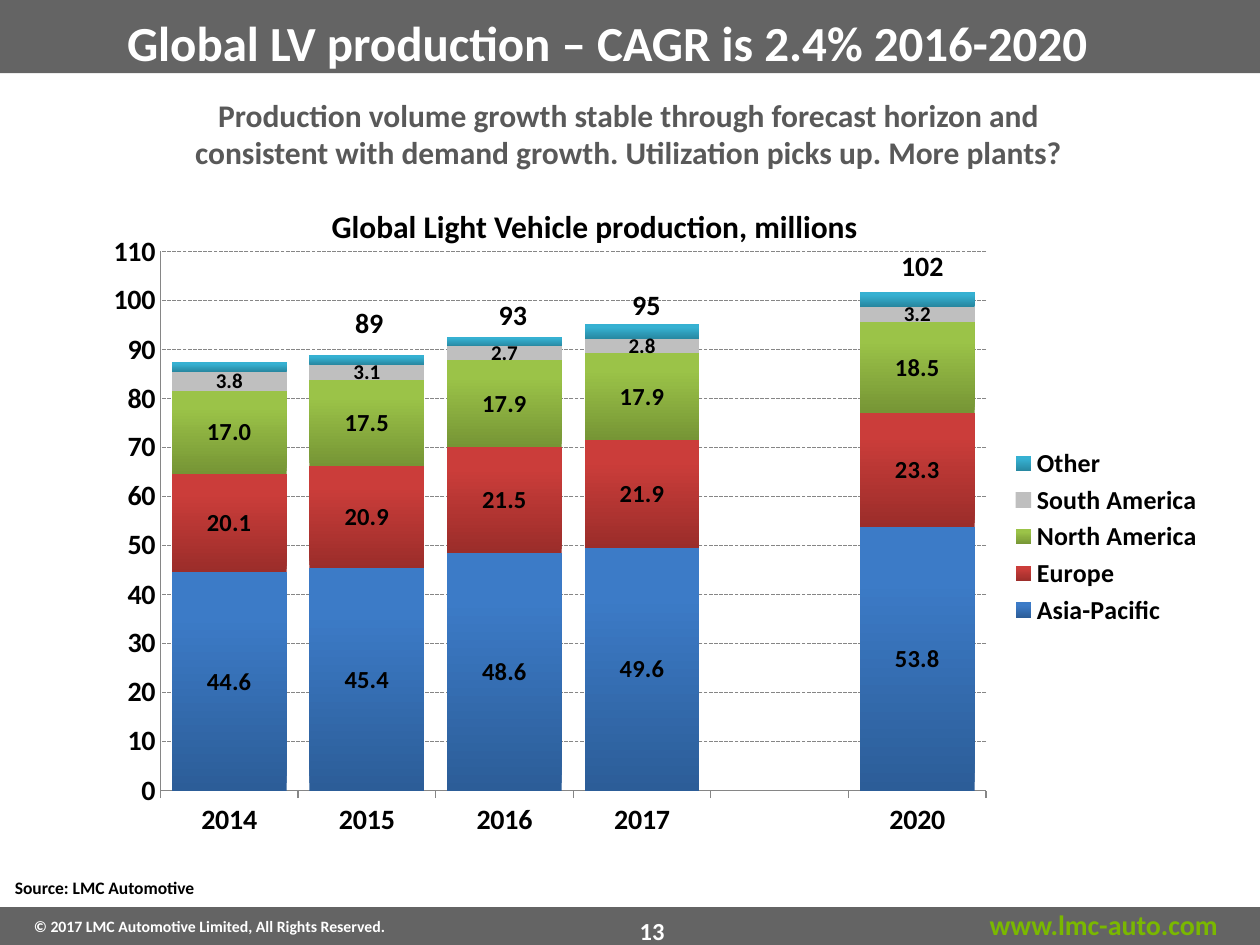
"""Build the slide on global light vehicle production."""
from lxml.etree import SubElement
from pptx import Presentation
from pptx.chart.data import CategoryChartData
from pptx.dml.color import RGBColor
from pptx.enum.chart import XL_CHART_TYPE, XL_LABEL_POSITION, XL_LEGEND_POSITION, XL_TICK_MARK
from pptx.enum.dml import MSO_LINE
from pptx.enum.shapes import MSO_SHAPE
from pptx.enum.text import PP_ALIGN
from pptx.oxml.ns import qn
from pptx.util import Inches, Pt


def style(font, size, color="000000"):
    font.name = "Calibri"
    font.size = Pt(size)
    font.bold = True
    font.color.rgb = RGBColor.from_string(color)


def text(at, lines, size, color="000000", align=PP_ALIGN.CENTER):
    tf = s.shapes.add_textbox(*map(Inches, at)).text_frame
    tf.word_wrap = True
    for i, line in enumerate(lines):
        p = tf.paragraphs[0] if i == 0 else tf.add_paragraph()
        p.alignment = align
        r = p.add_run()
        r.text = line
        style(r.font, size, color)


prs = Presentation()
prs.slide_width, prs.slide_height = Inches(10), Inches(7.5)
s = prs.slides.add_slide(prs.slide_layouts[6])

for top, height in [(0, 0.58), (7.2, 0.3)]:
    sp = s.shapes.add_shape(MSO_SHAPE.RECTANGLE, 0, Inches(top), Inches(10), Inches(height))
    sp.shadow.inherit = False
    sp.fill.solid()
    sp.fill.fore_color.rgb = RGBColor.from_string("646464")
    sp.line.fill.background()

text((7.62, 7.15, 2.28, 0.37), ["www.lmc-auto.com"], 16, "7AB800")
text((0.17, 7.23, 3.59, 0.25), ["© 2017 LMC Automotive Limited, All Rights Reserved."], 9, "FFFFFF", PP_ALIGN.LEFT)
text((3.38, 7.22, 3.59, 0.33), ["13"], 14, "FFFFFF")

series = [
    ("Asia-Pacific", (44.6, 45.4, 48.6, 49.6, None, 53.8), ("2C5D98", "3C7BC7"), 14),
    ("Europe", (20.1, 20.9, 21.5, 21.9, None, 23.3), ("9B2D2A", "CB3D3A"), 14),
    ("North America", (17, 17.5, 17.9, 17.9, None, 18.5), ("769535", "9BC348"), 14),
    ("South America", (3.8, 3.1, 2.7, 2.8, None, 3.2), ("BFBFBF",), 12),
    ("Other", (2, 2, 2, 3, None, 3), ("2787A0", "36B1D2"), None),
]
data = CategoryChartData()
data.categories = ["2014", "2015", "2016", "2017", " ", "2020"]
for name, values, colors, size in series:
    data.add_series(name, values)
chart = s.shapes.add_chart(XL_CHART_TYPE.COLUMN_STACKED, Inches(0.71), Inches(1.77),
                           Inches(8.94), Inches(4.98), data).chart
chart.has_title = False
style(chart.font, 18)
chart.has_legend = True
chart.legend.position = XL_LEGEND_POSITION.RIGHT
chart.legend.include_in_layout = False
style(chart.legend.font, 14.8)

plot = chart.plots[0]
plot.gap_width, plot.overlap, plot.vary_by_categories = 20, 100, False
for ser, (name, values, colors, size) in zip(plot.series, series):
    fill = ser.format.fill
    if len(colors) == 1:
        fill.solid()
        fill.fore_color.rgb = RGBColor.from_string(colors[0])
    else:
        fill.gradient()
        fill.gradient_angle = 90
        for stop, color, position in zip(fill.gradient_stops, colors, (0, 0.8)):
            stop.color.rgb = RGBColor.from_string(color)
            stop.position = position
    if size:
        labels = ser.data_labels
        labels.show_value = True
        labels.number_format, labels.number_format_is_linked = "0.0", False
        labels.position = XL_LABEL_POSITION.CENTER
        style(labels.font, size)

for axis in (chart.category_axis, chart.value_axis):
    style(axis.tick_labels.font, 16)
    axis.format.line.color.rgb = RGBColor.from_string("868686")
    axis.format.line.width = Pt(0.75)
chart.category_axis.major_tick_mark = XL_TICK_MARK.OUTSIDE
axis = chart.value_axis
axis.major_tick_mark = XL_TICK_MARK.NONE
axis.minimum_scale, axis.maximum_scale, axis.major_unit = 0, 110, 10
axis.tick_labels.number_format, axis.tick_labels.number_format_is_linked = "0", False
grid = axis.major_gridlines.format.line
grid.color.rgb = RGBColor.from_string("868686")
grid.width = Pt(0.75)
grid.dash_style = MSO_LINE.SQUARE_DOT

area = chart.element.chart.plotArea
for old in area.findall(qn("c:layout")):
    area.remove(old)
layout = SubElement(area, qn("c:layout"))
area.insert(0, layout)
manual = SubElement(layout, qn("c:manualLayout"))
for tag, val in [("layoutTarget", "inner"), ("xMode", "edge"), ("yMode", "edge"),
                 ("x", "0.063"), ("y", "0.046"), ("w", "0.733"), ("h", "0.859")]:
    SubElement(manual, qn("c:" + tag)).set("val", val)

text((1.48, 1.59, 6.48, 0.4), ["Global Light Vehicle production, millions"], 18)
text((0.91, 0.05, 8.72, 0.57), ["Global LV production – CAGR is 2.4% 2016-2020"], 28, "FFFFFF", PP_ALIGN.LEFT)
text((0.02, 6.91, 3.57, 0.27), ["Source: LMC Automotive"], 10, align=PP_ALIGN.LEFT)
text((0.04, 0.71, 9.9, 0.71), ["Production volume growth stable through forecast horizon and",
                               "consistent with demand growth. Utilization picks up. More plants?"], 18, "595959")
for left, top, total in [(2.62, 2.38, "89"), (3.76, 2.31, "93"), (4.82, 2.23, "95"), (7.01, 1.92, "102")]:
    text((left, top, 0.62, 0.37), [total], 16)

prs.save("out.pptx")
